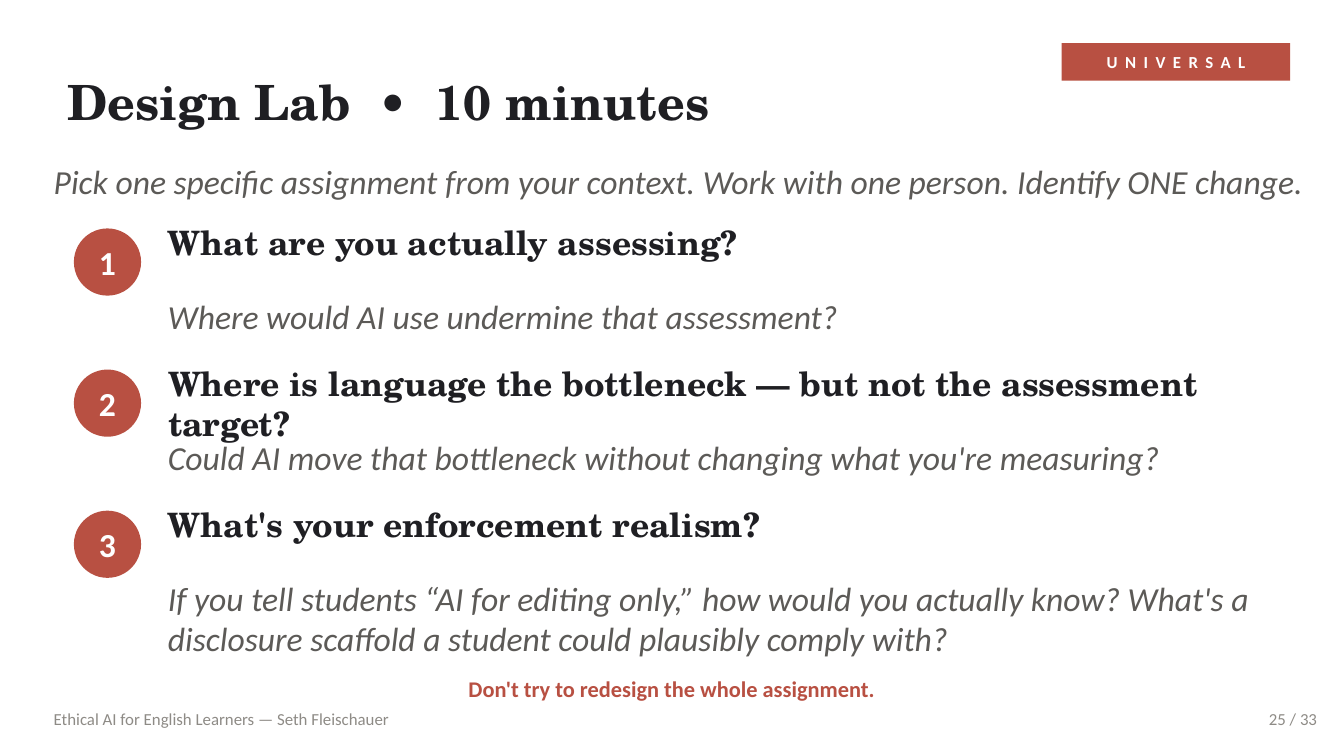
from dataclasses import dataclass
from typing import NamedTuple

from pptx import Presentation
from pptx.dml.color import RGBColor
from pptx.enum.shapes import MSO_SHAPE
from pptx.enum.text import MSO_ANCHOR, MSO_AUTO_SIZE, PP_ALIGN
from pptx.shapes.autoshape import Shape
from pptx.slide import Slide
from pptx.util import Inches, Pt


class TextStyle(NamedTuple):
    size: int
    color: str
    font: str = "Calibri"
    bold: bool = False
    italic: bool = False
    spacing: int = 0


@dataclass(frozen=True)
class Theme:
    background: str = "FFFFFF"
    accent: str = "B85042"
    title: TextStyle = TextStyle(26, "1F1F23", "TeX Gyre Schola", bold=True)
    question: TextStyle = TextStyle(18, "1F1F23", "TeX Gyre Schola", bold=True)
    prompt: TextStyle = TextStyle(18, "5C5A57", italic=True)
    number: TextStyle = TextStyle(18, "FFFFFF", bold=True)
    badge: TextStyle = TextStyle(9, "FFFFFF", bold=True, spacing=4)
    reminder: TextStyle = TextStyle(12, "B85042", bold=True)
    footer: TextStyle = TextStyle(9, "8E8B86")


class Box(NamedTuple):
    left: float
    top: float
    width: float
    height: float


class Step(NamedTuple):
    question: str
    prompt: str
    question_width: float = 8.2


THEME = Theme()
FIRST_STEP_TOP = 1.65
STEP_PITCH = 1.05
STEPS = [
    Step("What are you actually assessing?",
         "Where would AI use undermine that assessment?"),
    Step("Where is language the bottleneck — but not the assessment target?",
         "Could AI move that bottleneck without changing what you're measuring?",
         question_width=8.55),
    Step("What's your enforcement realism?",
         "If you tell students “AI for editing only,” how would you actually know? "
         "What's a disclosure scaffold a student could plausibly comply with?"),
]


def write_text(shape: Shape, text: str, style: TextStyle,
               align: PP_ALIGN = PP_ALIGN.LEFT,
               anchor: MSO_ANCHOR = MSO_ANCHOR.MIDDLE) -> None:
    frame = shape.text_frame
    frame_format = {
        "margin_left": 0, "margin_top": 0, "margin_right": 0, "margin_bottom": 0,
        "word_wrap": True, "auto_size": MSO_AUTO_SIZE.NONE, "vertical_anchor": anchor,
    }
    for name, value in frame_format.items():
        setattr(frame, name, value)

    paragraph = frame.paragraphs[0]
    paragraph.alignment = align
    run = paragraph.add_run()
    run.text = text
    font_format = {
        "name": style.font, "size": Pt(style.size),
        "bold": style.bold, "italic": style.italic,
    }
    for name, value in font_format.items():
        setattr(run.font, name, value)
    run.font.color.rgb = RGBColor.from_string(style.color)
    if style.spacing:
        run.font._element.set("spc", str(style.spacing * 100))


def add_text(slide: Slide, box: Box, text: str, style: TextStyle,
             align: PP_ALIGN = PP_ALIGN.LEFT,
             anchor: MSO_ANCHOR = MSO_ANCHOR.MIDDLE) -> None:
    shape = slide.shapes.add_textbox(*map(Inches, box))
    write_text(shape, text, style, align, anchor)


def add_label(slide: Slide, kind: MSO_SHAPE, box: Box, text: str, style: TextStyle) -> None:
    """Add an accent-filled shape with centred text laid over it in its own box."""
    shape = slide.shapes.add_shape(kind, *map(Inches, box))
    shape.shadow.inherit = False
    shape.fill.solid()
    shape.fill.fore_color.rgb = RGBColor.from_string(THEME.accent)
    shape.line.fill.background()
    add_text(slide, box, text, style, PP_ALIGN.CENTER)


def add_title(slide: Slide, box: Box, text: str) -> None:
    title = slide.shapes.title
    for name, value in box._asdict().items():
        setattr(title, name, Inches(value))
    write_text(title, text, THEME.title)


def add_step(slide: Slide, number: int, step: Step) -> None:
    top = FIRST_STEP_TOP + (number - 1) * STEP_PITCH
    add_label(slide, MSO_SHAPE.OVAL, Box(0.55, top + 0.05, 0.5, 0.5),
              str(number), THEME.number)
    add_text(slide, Box(1.25, top, step.question_width, 0.55),
             step.question, THEME.question, anchor=MSO_ANCHOR.TOP)
    add_text(slide, Box(1.25, top + 0.55, 8.2, 0.45),
             step.prompt, THEME.prompt, anchor=MSO_ANCHOR.TOP)


def main() -> None:
    presentation = Presentation()
    presentation.slide_width = Inches(10)
    presentation.slide_height = Inches(10 * 9 / 16)
    slide = presentation.slides.add_slide(presentation.slide_layouts.get_by_name("Title Only"))
    slide.background.fill.solid()
    slide.background.fill.fore_color.rgb = RGBColor.from_string(THEME.background)

    add_title(slide, Box(0.5, 0.4, 6.7, 0.7), "Design Lab  •  10 minutes")
    add_label(slide, MSO_SHAPE.RECTANGLE, Box(7.9, 0.32, 1.7, 0.28), "UNIVERSAL", THEME.badge)
    add_text(slide, Box(0.4, 1.15, 9.4, 0.4),
             "Pick one specific assignment from your context. "
             "Work with one person. Identify ONE change.", THEME.prompt)
    for number, step in enumerate(STEPS, start=1):
        add_step(slide, number, step)
    add_text(slide, Box(0.5, 4.97, 9, 0.3), "Don't try to redesign the whole assignment.",
             THEME.reminder, PP_ALIGN.CENTER)
    add_text(slide, Box(9, 5.2, 0.8, 0.3), "25 / 33", THEME.footer, PP_ALIGN.RIGHT)
    add_text(slide, Box(0.4, 5.2, 7, 0.3),
             "Ethical AI for English Learners — Seth Fleischauer", THEME.footer)
    presentation.save("out.pptx")


if __name__ == "__main__":
    main()
